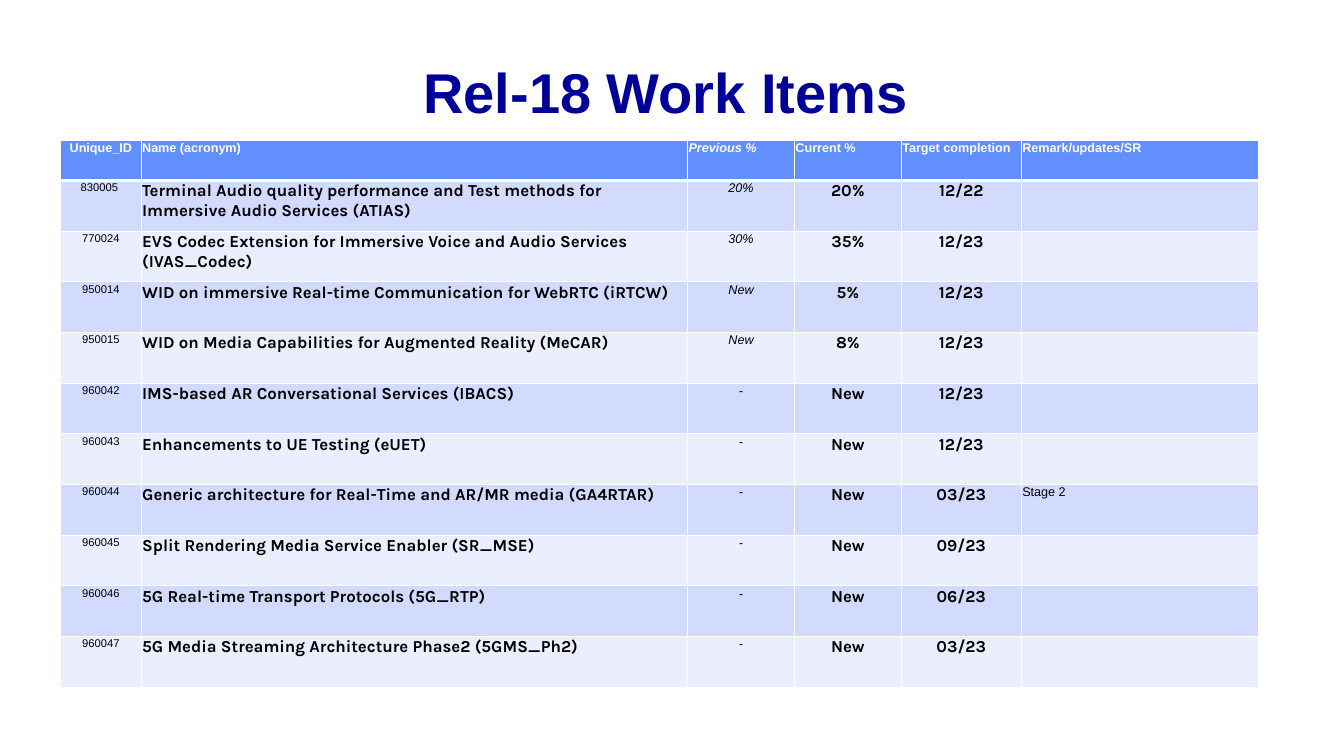
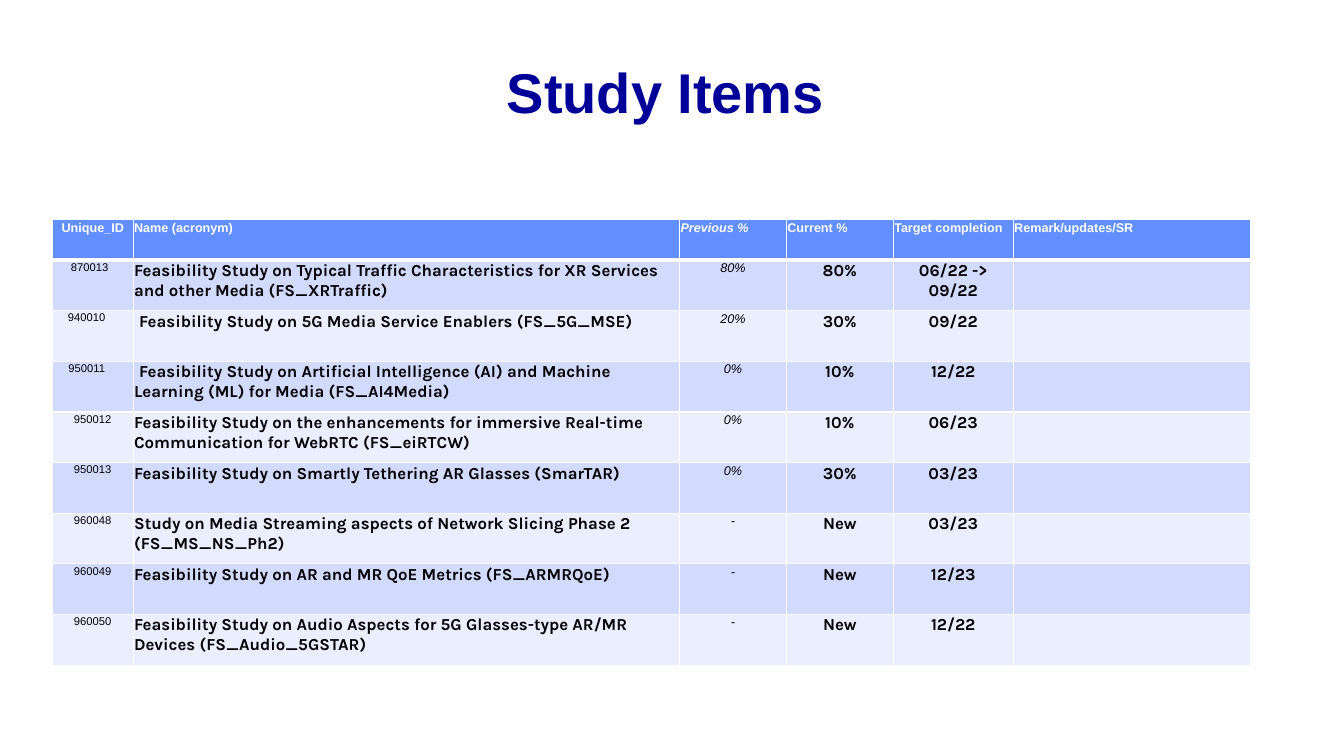
from lxml import etree
from pptx import Presentation
from pptx import util as u
from pptx.dml.color import RGBColor
from pptx.enum import text
from pptx.oxml.ns import qn

NAVY = RGBColor(0x00, 0x00, 0x99)
BLUE = RGBColor(0x61, 0x8F, 0xFD)
BANDS = (RGBColor(0xD2, 0xDB, 0xFE), RGBColor(0xEA, 0xEE, 0xFF))
WHITE = RGBColor(0xFF, 0xFF, 0xFF)
BLACK = RGBColor(0x00, 0x00, 0x00)

SLIDE_WIDTH, SLIDE_HEIGHT = 13.33, 7.5
COLUMNS = (0.8, 5.42, 1.06, 1.06, 1.19, 2.35)
HEADER_HEIGHT = 0.4
SPACE_WIDTH = 0.03
NAME_INDENT = 0.05

CENTER, LEFT = text.PP_ALIGN.CENTER, text.PP_ALIGN.LEFT
TITLE_FORMAT = dict(name="Arial", size=u.Pt(40), bold=True)
HEADER_FORMAT = dict(name="Arial", size=u.Pt(9), bold=True)
ID_FORMAT = dict(name="Arial", size=u.Pt(8), bold=False)
MAIN_FORMAT = dict(name="Karla", size=u.Pt(12), bold=True)
PREVIOUS_FORMAT = dict(name="Arial", size=u.Pt(9), bold=False, italic=True)
REMARK_FORMAT = dict(name="Arial", size=u.Pt(9), bold=False)

HEADERS = ("Unique_ID", "Name (acronym)", "Previous %", "Current %",
           "Target completion", "Remark/updates/SR")
HEADER_STYLES = [
    (HEADER_FORMAT, CENTER), (HEADER_FORMAT, LEFT),
    ({**HEADER_FORMAT, "italic": True}, LEFT),
    *[(HEADER_FORMAT, LEFT)] * 3,
]
BODY_STYLES = [
    (ID_FORMAT, CENTER), (MAIN_FORMAT, LEFT), (PREVIOUS_FORMAT, CENTER),
    (MAIN_FORMAT, CENTER), (MAIN_FORMAT, CENTER), (REMARK_FORMAT, LEFT),
]

WORK_ITEMS = [
    ("830005", "Terminal Audio quality performance and Test methods for Immersive Audio Services (ATIAS)", "20%", "20%", "12/22", ""),
    ("770024", "EVS Codec Extension for Immersive Voice and Audio Services (IVAS_Codec)", "30%", "35%", "12/23", ""),
    ("950014", "WID on immersive Real-time Communication for WebRTC (iRTCW)", "New", "5%", "12/23", ""),
    ("950015", "WID on Media Capabilities for Augmented Reality (MeCAR)", "New", "8%", "12/23", ""),
    ("960042", "IMS-based AR Conversational Services (IBACS)", "-", "New", "12/23", ""),
    ("960043", "Enhancements to UE Testing (eUET)", "-", "New", "12/23", ""),
    ("960044", "Generic architecture for Real-Time and AR/MR media (GA4RTAR)", "-", "New", "03/23", "Stage 2"),
    ("960045", "Split Rendering Media Service Enabler (SR_MSE)", "-", "New", "09/23", ""),
    ("960046", "5G Real-time Transport Protocols (5G_RTP)", "-", "New", "06/23", ""),
    ("960047", "5G Media Streaming Architecture Phase2 (5GMS_Ph2)", "-", "New", "03/23", ""),
]
STUDY_ITEMS = [
    ("870013", "Feasibility Study on Typical Traffic Characteristics for XR Services and other Media (FS_XRTraffic)", "80%", "80%", "06/22 -> 09/22", ""),
    ("940010", "Feasibility Study on 5G Media Service Enablers (FS_5G_MSE)", "20%", "30%", "09/22", ""),
    ("950011", "Feasibility Study on Artificial Intelligence (AI) and Machine Learning (ML) for Media (FS_AI4Media)", "0%", "10%", "12/22", ""),
    ("950012", "Feasibility Study on the enhancements for immersive Real-time Communication for WebRTC (FS_eiRTCW)", "0%", "10%", "06/23", ""),
    ("950013", "Feasibility Study on Smartly Tethering AR Glasses (SmarTAR)", "0%", "30%", "03/23", ""),
    ("960048", "Study on Media Streaming aspects of Network Slicing Phase 2 (FS_MS_NS_Ph2)", "-", "New", "03/23", ""),
    ("960049", "Feasibility Study on AR and MR QoE Metrics (FS_ARMRQoE)", "-", "New", "12/23", ""),
    ("960050", "Feasibility Study on Audio Aspects for 5G Glasses-type AR/MR Devices (FS_Audio_5GSTAR)", "-", "New", "12/22", ""),
]
ID_SHIFTS = {"830005": 1, "870013": 2, "940010": 4, "950011": 4}
INDENTED_IDS = ("940010", "950011")


def set_attributes(target, values):
    for name, value in values.items():
        setattr(target, name, value)


def write(paragraph, words, style, color, alignment):
    paragraph.alignment = alignment
    if words:
        font = paragraph.add_run().font
        paragraph.runs[0].text = words
    else:
        font = paragraph.font
    set_attributes(font, style)
    font.color.rgb = color


def add_title(slide, words):
    box = slide.shapes.add_textbox(u.Inches(1.7), u.Inches(0.36), u.Inches(9.8), u.Inches(1.18))
    set_attributes(box.text_frame, dict(word_wrap=True, vertical_anchor=text.MSO_ANCHOR.MIDDLE))
    paragraph = box.text_frame.paragraphs[0]
    paragraph.line_spacing = 0.9
    write(paragraph, words, TITLE_FORMAT, NAVY, CENTER)


def add_borders(cell, widths):
    properties = cell._tc.get_or_add_tcPr()
    for side, width in widths.items():
        line = etree.SubElement(properties, qn(f"a:ln{side}"), w=str(u.Pt(width)))
        fill = etree.SubElement(line, qn("a:solidFill"))
        etree.SubElement(fill, qn("a:srgbClr"), val=str(WHITE))


def fill_cell(cell, words, style, fill, color, top=1, bottom=1):
    edge = u.Inches(0.01)
    set_attributes(cell, dict(margin_left=edge, margin_right=edge, margin_top=edge, margin_bottom=0))
    add_borders(cell, dict(L=1, R=1, T=top, B=bottom))
    cell.fill.solid()
    cell.fill.fore_color.rgb = fill
    font_values, alignment = style
    write(cell.text_frame.paragraphs[0], words, font_values, color, alignment)


def add_items_table(slide, left, top, height, items):
    frame = slide.shapes.add_table(len(items) + 1, len(COLUMNS), u.Inches(left), u.Inches(top),
                                   u.Inches(sum(COLUMNS)), u.Inches(height))
    table = frame.table
    for column, width in zip(table.columns, COLUMNS):
        column.width = u.Inches(width)
    for row in table.rows:
        row.height = u.Inches((height - HEADER_HEIGHT) / len(items))
    table.rows[0].height = u.Inches(HEADER_HEIGHT)

    for cell, words, style in zip(table.rows[0].cells, HEADERS, HEADER_STYLES):
        fill_cell(cell, words, style, BLUE, WHITE, bottom=3)
    for number, item in enumerate(items):
        cells = list(table.rows[number + 1].cells)
        for cell, words, style in zip(cells, item, BODY_STYLES):
            fill_cell(cell, words, style, BANDS[number % 2], BLACK, top=1 if number else 3)
        cells[0].margin_right += u.Inches(SPACE_WIDTH * ID_SHIFTS.get(item[0], 0))
        if item[0] in INDENTED_IDS:
            properties = cells[1].text_frame.paragraphs[0]._p.get_or_add_pPr()
            properties.set("indent", str(u.Inches(NAME_INDENT)))


def main():
    presentation = Presentation()
    presentation.slide_width = u.Inches(SLIDE_WIDTH)
    presentation.slide_height = u.Inches(SLIDE_HEIGHT)
    for title, left, top, height, items in (
        ("Rel-18 Work Items", 0.6, 1.39, 5.43, WORK_ITEMS),
        ("Study Items", 0.52, 2.18, 4.42, STUDY_ITEMS),
    ):
        slide = presentation.slides.add_slide(presentation.slide_layouts[6])
        add_title(slide, title)
        add_items_table(slide, left, top, height, items)
    presentation.save("out.pptx")


if __name__ == "__main__":
    main()
